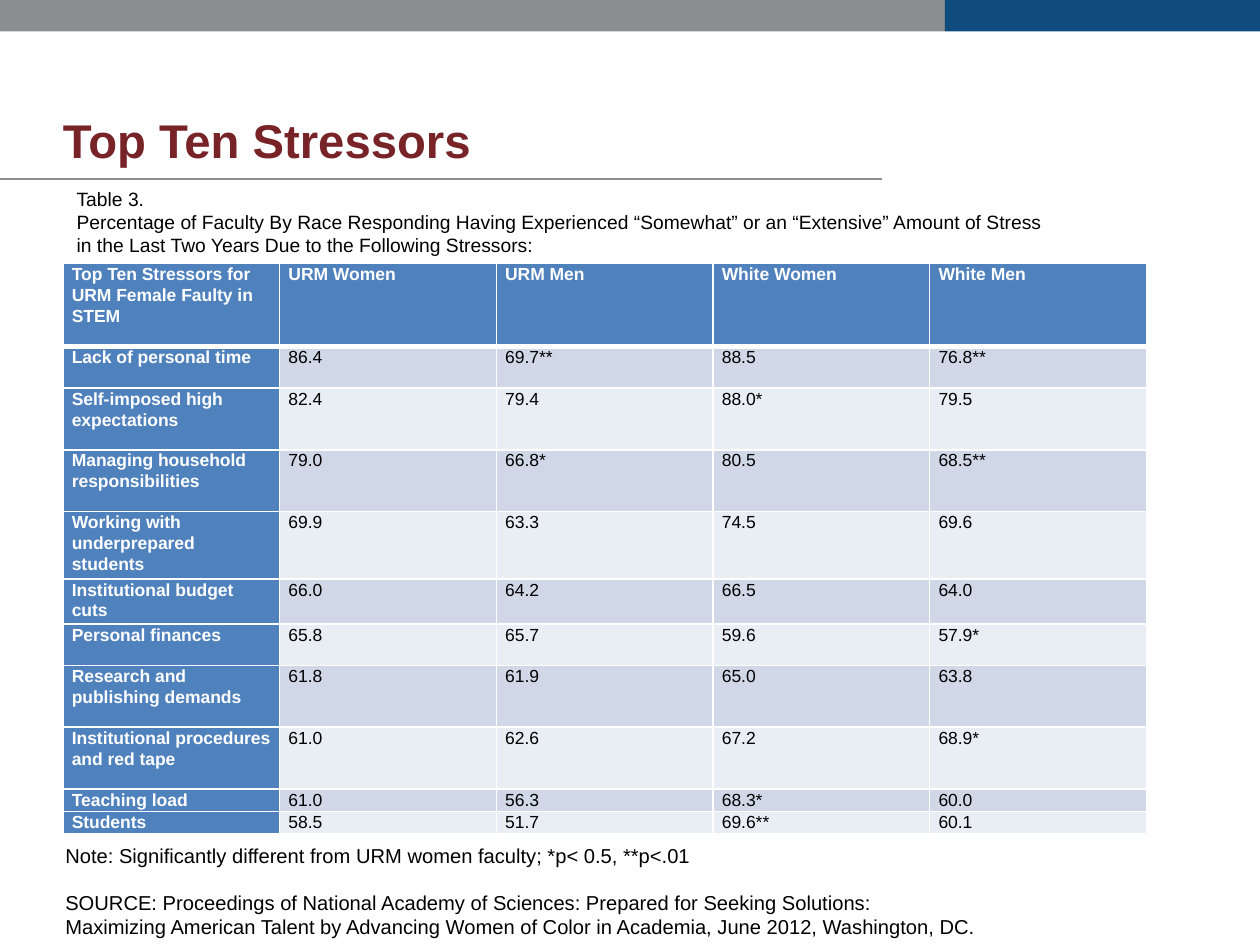
from lxml import etree
from pptx import Presentation
from pptx.dml.color import RGBColor
from pptx.enum.shapes import MSO_CONNECTOR, MSO_SHAPE
from pptx.enum.text import MSO_ANCHOR
from pptx.oxml.ns import qn
from pptx.util import Inches, Pt

COLORS = {
    "gray": "8C8D8E", "navy": "104B7D", "maroon": "782327", "black": "000000",
    "white": "FFFFFF", "blue": "4F81BD", "odd": "D0D8E8", "even": "E9EDF4",
}
FONT = "Arial"

TITLE = "Top Ten Stressors"
CAPTION = [
    "Table 3.",
    "Percentage of Faculty By Race Responding Having Experienced “Somewhat” or an “Extensive” Amount of Stress",
    "in the Last Two Years Due to the Following Stressors:",
]
NOTE = [
    "Note: Significantly different from URM women faculty; *p< 0.5, **p<.01",
    "SOURCE: Proceedings of National Academy of Sciences: Prepared for Seeking Solutions:",
    "Maximizing American Talent by Advancing Women of Color in Academia, June 2012, Washington, DC.",
]
HEADER = ("Top Ten Stressors for URM Female Faulty in STEM",
          "URM Women", "URM Men", "White Women", "White Men")
STRESSORS = [
    ("Lack of personal time", "86.4", "69.7**", "88.5", "76.8**"),
    ("Self-imposed high expectations", "82.4", "79.4", "88.0*", "79.5"),
    ("Managing household responsibilities", "79.0", "66.8*", "80.5", "68.5**"),
    ("Working with underprepared students", "69.9", "63.3", "74.5", "69.6"),
    ("Institutional budget cuts", "66.0", "64.2", "66.5", "64.0"),
    ("Personal finances", "65.8", "65.7", "59.6", "57.9*"),
    ("Research and publishing demands", "61.8", "61.9", "65.0", "63.8"),
    ("Institutional procedures and red tape", "61.0", "62.6", "67.2", "68.9*"),
    ("Teaching load", "61.0", "56.3", "68.3*", "60.0"),
    ("Students", "58.5", "51.7", "69.6**", "60.1"),
]
ROW_HEIGHTS = [0.66, 0.33, 0.49, 0.49, 0.49, 0.33, 0.33, 0.49, 0.49, 0.16, 0.16]
COLUMN_WIDTH = 1.72
BANNER = [(0, 7.5, "gray"), (7.5, 2.5, "navy")]


def rgb(name):
    return RGBColor.from_string(COLORS[name])


def write(frame, lines, size, color="black", bold=False, spacing=None, gaps=None):
    frame.word_wrap = True
    for index, line in enumerate(lines):
        paragraph = frame.paragraphs[0] if index == 0 else frame.add_paragraph()
        if spacing:
            paragraph.line_spacing = spacing
        if gaps and index in gaps:
            paragraph.space_before = Pt(gaps[index])
        run = paragraph.add_run()
        run.text = line
        run.font.name = FONT
        run.font.size = Pt(size)
        run.font.bold = bold
        run.font.color.rgb = rgb(color)


def add_text(slide, box, lines, size, anchor=MSO_ANCHOR.TOP, inset=None, **style):
    frame = slide.shapes.add_textbox(*map(Inches, box)).text_frame
    frame.vertical_anchor = anchor
    if inset is not None:
        frame.margin_left = frame.margin_right = Inches(inset)
        frame.margin_top = frame.margin_bottom = Inches(inset)
    write(frame, lines, size, **style)


def set_borders(cell, **widths):
    properties = cell._tc.get_or_add_tcPr()
    for position, side in enumerate(("lnL", "lnR", "lnT", "lnB")):
        border = etree.Element(qn(f"a:{side}"), w=str(Pt(widths.get(side, 1))))
        fill = etree.SubElement(border, qn("a:solidFill"))
        etree.SubElement(fill, qn("a:srgbClr"), val=COLORS["white"])
        properties.insert(position, border)


def add_frame(slide):
    rule = slide.shapes.add_connector(
        MSO_CONNECTOR.STRAIGHT, Inches(0), Inches(1.42), Inches(7), Inches(1.42))
    rule.line.color.rgb = rgb("gray")
    rule.line.width = Pt(0.75)
    etree.SubElement(rule._element.spPr, qn("a:effectLst"))
    for left, width, color in BANNER:
        band = slide.shapes.add_shape(
            MSO_SHAPE.RECTANGLE, Inches(left), Inches(0), Inches(width), Inches(0.25))
        band.shadow.inherit = False
        band.fill.solid()
        band.fill.fore_color.rgb = rgb(color)
        band.line.fill.background()


def add_stressor_table(slide):
    rows = [HEADER] + STRESSORS
    table = slide.shapes.add_table(
        len(rows), len(HEADER), Inches(0.5), Inches(2.09),
        Inches(COLUMN_WIDTH * len(HEADER)), Inches(sum(ROW_HEIGHTS))).table
    table.first_col = True
    for column in table.columns:
        column.width = Inches(COLUMN_WIDTH)
    for r, (values, height) in enumerate(zip(rows, ROW_HEIGHTS)):
        table.rows[r].height = Inches(height)
        for c, value in enumerate(values):
            heading = r == 0 or c == 0
            cell = table.cell(r, c)
            cell.margin_left = cell.margin_right = Inches(0.07)
            cell.margin_top = cell.margin_bottom = 0
            cell.fill.solid()
            cell.fill.fore_color.rgb = rgb("blue" if heading else "odd" if r % 2 else "even")
            set_borders(cell, lnT=3 if r == 1 else 1, lnB=3 if r == 0 else 1)
            write(cell.text_frame, [value], 10, color="white" if heading else "black",
                  bold=heading, spacing=1.07)


def main():
    deck = Presentation()
    deck.slide_width, deck.slide_height = Inches(10), Inches(7.5)
    slide = deck.slides.add_slide(deck.slide_layouts[6])
    add_frame(slide)
    add_text(slide, (0.5, 0.86, 5.83, 0.5), [TITLE], 27, anchor=MSO_ANCHOR.MIDDLE,
             inset=0, color="maroon", bold=True)
    add_text(slide, (0.42, 6.64, 7.53, 0.88), NOTE, 11.5, gaps={1: 13.5})
    add_stressor_table(slide)
    add_text(slide, (0.51, 1.43, 7.96, 0.66), CAPTION, 11, anchor=MSO_ANCHOR.MIDDLE)
    deck.save("out.pptx")


if __name__ == "__main__":
    main()
